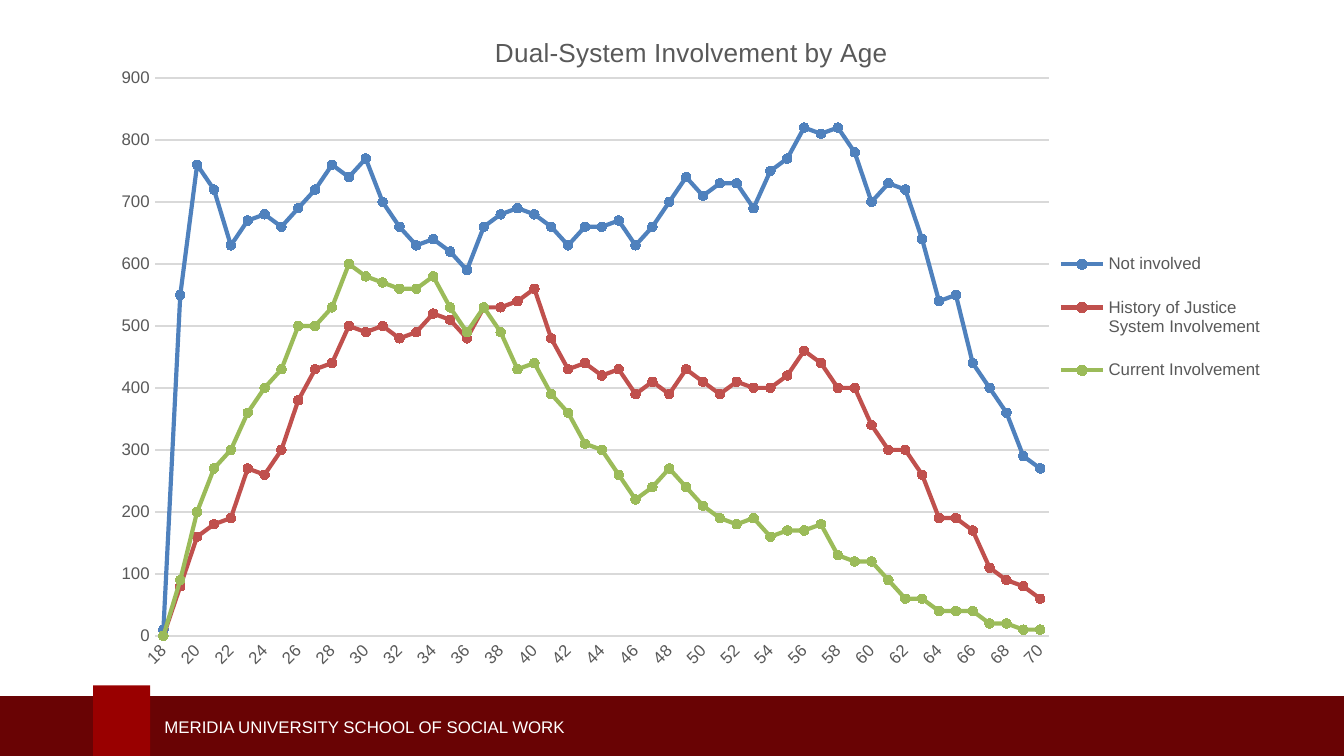
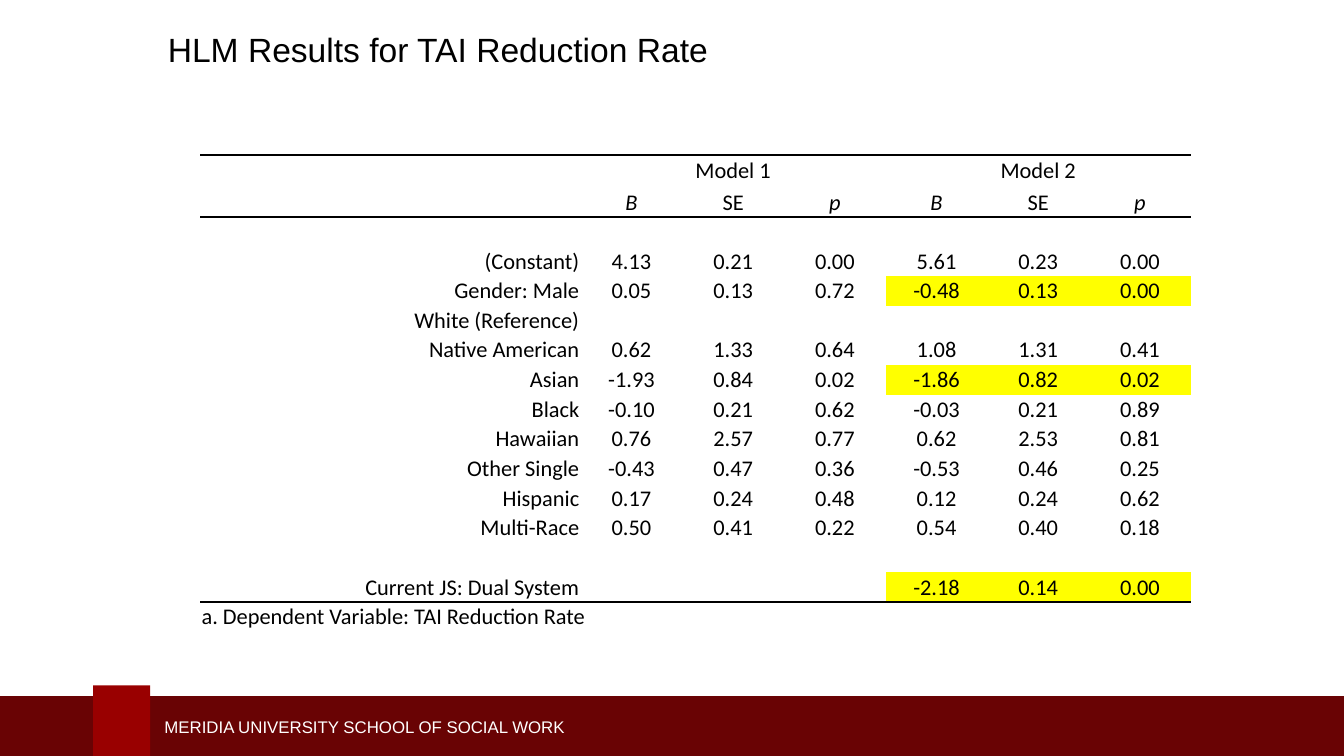
"""Build two research slides: a line chart by age and a regression table."""
import lxml.etree
import pptx
import pptx.chart.data
import pptx.dml.color
import pptx.enum.chart
import pptx.enum.shapes
import pptx.enum.text
import pptx.oxml.ns
import pptx.util

RGB = pptx.dml.color.RGBColor
ALIGN = pptx.enum.text.PP_ALIGN
ANCHOR = pptx.enum.text.MSO_ANCHOR
qn = pptx.oxml.ns.qn

CRIMSON = RGB(0x99, 0x00, 0x00)
MAROON = RGB(0x69, 0x03, 0x04)
WHITE = RGB(0xFF, 0xFF, 0xFF)
BLACK = RGB(0x00, 0x00, 0x00)
YELLOW = RGB(0xFF, 0xFF, 0x00)
GRAY = RGB(0x59, 0x59, 0x59)
GRID = RGB(0xD9, 0xD9, 0xD9)
BLUE = RGB(0x4F, 0x81, 0xBD)
RED = RGB(0xC0, 0x50, 0x4D)
GREEN = RGB(0x9B, 0xBB, 0x59)

WIDTH = pptx.util.Inches(10)
HEIGHT = WIDTH * 9 // 16
NO_GRID_STYLE = "{2D5ABB26-0587-4C30-8999-92F81FD0307C}"
FOOTER = "MERIDIA UNIVERSITY SCHOOL OF SOCIAL WORK"

AGES = range(18, 71)
INVOLVEMENT = [
    ("Not involved", BLUE, [
        10, 550, 760, 720, 630, 670, 680, 660, 690, 720, 760, 740, 770, 700,
        660, 630, 640, 620, 590, 660, 680, 690, 680, 660, 630, 660, 660, 670,
        630, 660, 700, 740, 710, 730, 730, 690, 750, 770, 820, 810, 820, 780,
        700, 730, 720, 640, 540, 550, 440, 400, 360, 290, 270]),
    ("History of Justice System Involvement", RED, [
        0, 80, 160, 180, 190, 270, 260, 300, 380, 430, 440, 500, 490, 500,
        480, 490, 520, 510, 480, 530, 530, 540, 560, 480, 430, 440, 420, 430,
        390, 410, 390, 430, 410, 390, 410, 400, 400, 420, 460, 440, 400, 400,
        340, 300, 300, 260, 190, 190, 170, 110, 90, 80, 60]),
    ("Current Involvement", GREEN, [
        0, 90, 200, 270, 300, 360, 400, 430, 500, 500, 530, 600, 580, 570,
        560, 560, 580, 530, 490, 530, 490, 430, 440, 390, 360, 310, 300, 260,
        220, 240, 270, 240, 210, 190, 180, 190, 160, 170, 170, 180, 130, 120,
        120, 90, 60, 60, 40, 40, 40, 20, 20, 10, 10]),
]

MODEL_ROWS = [
    ["", "Model 1", "", "", "Model 2", "", ""],
    ["", "B", "SE", "p", "B", "SE", "p"],
    [""] * 7,
    ["(Constant)", "4.13", "0.21", "0.00", "5.61", "0.23", "0.00"],
    ["Gender: Male", "0.05", "0.13", "0.72", "-0.48", "0.13", "0.00"],
    ["White (Reference)"] + [""] * 6,
    ["Native American", "0.62", "1.33", "0.64", "1.08", "1.31", "0.41"],
    ["Asian", "-1.93", "0.84", "0.02", "-1.86", "0.82", "0.02"],
    ["Black", "-0.10", "0.21", "0.62", "-0.03", "0.21", "0.89"],
    ["Hawaiian", "0.76", "2.57", "0.77", "0.62", "2.53", "0.81"],
    ["Other Single", "-0.43", "0.47", "0.36", "-0.53", "0.46", "0.25"],
    ["Hispanic", "0.17", "0.24", "0.48", "0.12", "0.24", "0.62"],
    ["Multi-Race", "0.50", "0.41", "0.22", "0.54", "0.40", "0.18"],
    [""] * 7,
    ["Current JS: Dual System", "", "", "", "-2.18", "0.14", "0.00"],
    ["a. Dependent Variable: TAI Reduction Rate"] + [""] * 6,
]
SIGNIFICANT_ROWS = {"Gender: Male", "Asian", "Current JS: Dual System"}
COLUMN_SHARES = [28.3] + [7.57] * 6
ROW_SHARES = [3.92, 4.27] + [3.92] * 13 + [7.29]
RULED_EDGES = {0: "a:lnT", 1: "a:lnB", 2: "a:lnT", 14: "a:lnB", 15: "a:lnT"}


def across(percent):
    """Return a length as a percentage of the slide width."""
    return round(WIDTH * percent / 100)


def down(percent):
    """Return a length as a percentage of the slide height."""
    return round(HEIGHT * percent / 100)


def area(left, top, width, height):
    """Return a position and size from percentages of the slide."""
    return across(left), down(top), across(width), down(height)


def style_font(font, size, color, face="Arial", italic=False):
    """Set the size, colour and face of a font."""
    font.size = pptx.util.Pt(size)
    font.color.rgb = color
    font.name = face
    font.bold = False
    font.italic = italic


def write(frame, text, size=12, color=BLACK, face="Arial", italic=False, align=ALIGN.LEFT):
    """Write formatted text into the first paragraph of a frame."""
    paragraph = frame.paragraphs[0]
    paragraph.alignment = align
    if text:
        run = paragraph.add_run()
        run.text = text
        style_font(run.font, size, color, face, italic)
    else:
        lxml.etree.SubElement(paragraph._p, qn("a:endParaRPr"), sz=str(size * 100))


def add_label(slide, bounds, text, anchor=ANCHOR.TOP, **text_format):
    """Add a wrapped text box."""
    frame = slide.shapes.add_textbox(*bounds).text_frame
    frame.word_wrap = True
    frame.vertical_anchor = anchor
    write(frame, text, **text_format)


def add_block(slide, bounds, color):
    """Add a plain filled rectangle."""
    block = slide.shapes.add_shape(pptx.enum.shapes.MSO_SHAPE.RECTANGLE, *bounds)
    block.shadow.inherit = False
    block.fill.solid()
    block.fill.fore_color.rgb = color
    block.line.fill.background()


def add_branded_slide(deck):
    """Add a blank slide with the footer band."""
    slide = deck.slides.add_slide(deck.slide_layouts[6])
    add_block(slide, area(-0.3, 92.09, 100.9, 8.89), MAROON)
    add_block(slide, area(6.93, 90.67, 4.25, 10.31), CRIMSON)
    add_label(slide, area(11.25, 93.87, 39.5, 4.44), FOOTER,
              anchor=ANCHOR.MIDDLE, size=9, color=WHITE)
    return slide


def place(part, index, inner=False, **shares):
    """Give a chart part a manual layout in shares of the chart."""
    for automatic in part.findall(qn("c:layout")):
        part.remove(automatic)
    layout = lxml.etree.Element(qn("c:layout"))
    manual = lxml.etree.SubElement(layout, qn("c:manualLayout"))
    settings = {"layoutTarget": "inner"} if inner else {}
    settings.update(xMode="edge", yMode="edge", **shares)
    for tag, value in settings.items():
        lxml.etree.SubElement(manual, qn("c:" + tag), val=str(value))
    part.insert(index, layout)


def style_axes(chart):
    """Format the age axis and the count axis."""
    ages, counts = chart.category_axis, chart.value_axis
    for axis in (ages, counts):
        axis.major_tick_mark = pptx.enum.chart.XL_TICK_MARK.NONE
        axis.minor_tick_mark = pptx.enum.chart.XL_TICK_MARK.NONE
        style_font(axis.tick_labels.font, 9, GRAY)
    counts.minimum_scale, counts.maximum_scale, counts.major_unit = 0, 900, 100
    counts.tick_labels.number_format = "###0"
    counts.tick_labels.number_format_is_linked = False
    counts.format.line.fill.background()
    for line in (ages.format.line, counts.major_gridlines.format.line):
        line.color.rgb = GRID
        line.width = pptx.util.Pt(0.75)
    age_axis = next(chart.element.iter(qn("c:catAx")))
    next(age_axis.iter(qn("a:bodyPr"))).set("rot", "-2700000")


def style_series(series, color):
    """Draw a series as a straight line with round markers."""
    series.smooth = False
    series.format.line.color.rgb = color
    series.format.line.width = pptx.util.Pt(2.25)
    series.marker.style = pptx.enum.chart.XL_MARKER_STYLE.CIRCLE
    series.marker.size = 5
    series.marker.format.fill.solid()
    series.marker.format.fill.fore_color.rgb = color
    series.marker.format.line.color.rgb = color


def add_involvement_chart(slide):
    """Add the line chart of involvement by age."""
    data = pptx.chart.data.CategoryChartData(number_format="###0")
    data.categories = [str(age) for age in AGES]
    for name, _, counts in INVOLVEMENT:
        data.add_series(name, counts)
    chart = slide.shapes.add_chart(pptx.enum.chart.XL_CHART_TYPE.LINE_MARKERS,
                                   *area(7.6, 1.42, 87.5, 88.18), data).chart
    style_font(chart.font, 10, BLACK)
    write(chart.chart_title.text_frame, "Dual-System Involvement by Age",
          size=14, color=GRAY, align=ALIGN.CENTER)
    chart.chart_title.include_in_layout = False
    place(chart.chart_title._element, 1, x=0.33, y=0.03)
    chart.has_legend = True
    chart.legend.position = pptx.enum.chart.XL_LEGEND_POSITION.RIGHT
    chart.legend.include_in_layout = False
    style_font(chart.legend.font, 9, GRAY)
    place(chart.legend._element, 1, x=0.81, y=0.33, w=0.18, h=0.26)
    place(next(chart.element.iter(qn("c:plotArea"))), 0, inner=True,
          x=0.045, y=0.101, w=0.76, h=0.837)
    style_axes(chart)
    chart.plots[0].vary_by_categories = False
    for series, (_, color, _) in zip(chart.plots[0].series, INVOLVEMENT):
        style_series(series, color)


def rule_cell(cell, ruled_edge):
    """Draw a black rule on one edge of a cell and clear the others."""
    for edge in ("a:lnL", "a:lnR", "a:lnT", "a:lnB"):
        line = lxml.etree.SubElement(cell._tc.get_or_add_tcPr(), qn(edge), w="12700")
        if edge == ruled_edge:
            fill = lxml.etree.SubElement(line, qn("a:solidFill"))
            lxml.etree.SubElement(fill, qn("a:srgbClr"), val=str(BLACK))
        else:
            lxml.etree.SubElement(line, qn("a:noFill"))


def fill_cell(cell, text, row, column, significant):
    """Write and format one cell of the model table."""
    cell.margin_left = cell.margin_right = cell.margin_top = pptx.util.Inches(0.01)
    cell.margin_bottom = 0
    cell.vertical_anchor = ANCHOR.BOTTOM if row < 2 else ANCHOR.TOP
    rule_cell(cell, RULED_EDGES.get(row))
    if significant and column > 3:
        cell.fill.solid()
        cell.fill.fore_color.rgb = YELLOW
    elif text and row > 2 and column not in (0, 3):
        cell.fill.solid()
        cell.fill.fore_color.rgb = WHITE
    else:
        cell.fill.background()
    if row == len(MODEL_ROWS) - 1:
        align = ALIGN.LEFT
    else:
        align = ALIGN.CENTER if column else ALIGN.RIGHT
    write(cell.text_frame, text, face="Calibri", italic=text in ("B", "p"), align=align)


def add_model_table(slide):
    """Add the table of regression results for both models."""
    bounds = area(14.9, 20.5, sum(COLUMN_SHARES), sum(ROW_SHARES))
    holder = slide.shapes.add_table(len(ROW_SHARES), len(COLUMN_SHARES), *bounds)
    next(holder.element.iter(qn("a:tableStyleId"))).text = NO_GRID_STYLE
    table = holder.table
    table.first_row = table.horz_banding = False
    for column, share in zip(table.columns, COLUMN_SHARES):
        column.width = across(share)
    for row, share in zip(table.rows, ROW_SHARES):
        row.height = down(share)
    for row, texts in enumerate(MODEL_ROWS):
        for column, text in enumerate(texts):
            fill_cell(table.cell(row, column), text, row, column,
                      texts[0] in SIGNIFICANT_ROWS)
    for row, first, last in ((0, 1, 3), (0, 4, 6), (15, 0, 6)):
        table.cell(row, first).merge(table.cell(row, last))


def main():
    """Build and save the deck."""
    deck = pptx.Presentation()
    deck.slide_width, deck.slide_height = WIDTH, HEIGHT
    add_involvement_chart(add_branded_slide(deck))
    results = add_branded_slide(deck)
    add_label(results, area(11.5, 3.02, 44.5, 7.11),
              "HLM Results for TAI Reduction Rate", size=18)
    add_model_table(results)
    deck.save("out.pptx")


if __name__ == "__main__":
    main()
